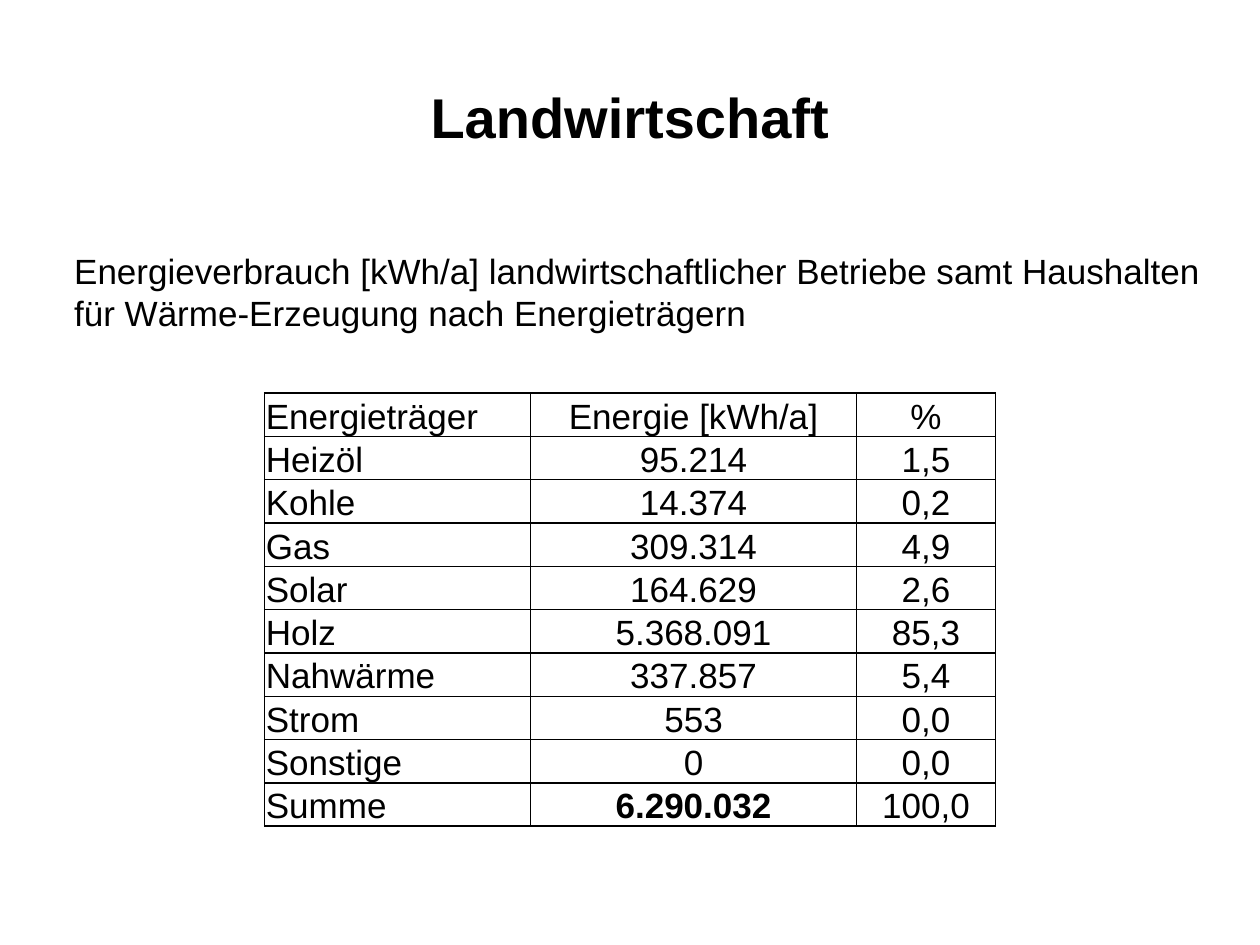
from dataclasses import dataclass
from typing import Any, NamedTuple

from lxml import etree
from pptx import Presentation
from pptx import util as u
from pptx.dml import color
from pptx.enum import text
from pptx.oxml import ns


@dataclass(frozen=True)
class Theme:
    font: str = "Arial"
    ink: str = "000000"
    paper: str = "FFFFFF"
    title: int = 32
    body: int = 20
    border: float = 1


class Box(NamedTuple):
    left: float
    top: float
    width: float
    height: float


class Row(NamedTuple):
    carrier: str
    energy: str
    percent: str


THEME = Theme()
WIDTH, HEIGHT = 10, 7.5
COLUMNS = (2.11, 2.59, 1.1)
ROW_HEIGHT = 0.32
TITLE_BOX = Box(0.5, 0.3, 9, 1.25)
INTRO_BOX = Box(0.49, 1.93, 9.39, 1.08)
TABLE_TOP = 3.12
ROWS = (
    Row("Energieträger", "Energie [kWh/a]", "%"),
    Row("Heizöl", "95.214", "1,5"),
    Row("Kohle", "14.374", "0,2"),
    Row("Gas", "309.314", "4,9"),
    Row("Solar", "164.629", "2,6"),
    Row("Holz", "5.368.091", "85,3"),
    Row("Nahwärme", "337.857", "5,4"),
    Row("Strom", "553", "0,0"),
    Row("Sonstige", "0", "0,0"),
    Row("Summe", "6.290.032", "100,0"),
)
TOTAL = ROWS[-1].energy


def write(tf: Any, content: str, *, size: int = THEME.body, bold: bool = False,
          centered: bool = False) -> None:
    p = tf.paragraphs[0]
    p.alignment = text.PP_ALIGN.CENTER if centered else text.PP_ALIGN.LEFT
    r = p.add_run()
    r.text = content
    r.font.name = THEME.font
    r.font.size = u.Pt(size)
    r.font.bold = bold
    r.font.color.rgb = color.RGBColor.from_string(THEME.ink)


def add_text(s: Any, box: Box, content: str, *, anchor: Any = text.MSO_ANCHOR.TOP,
             **style: Any) -> None:
    tf = s.shapes.add_textbox(*map(u.Inches, box)).text_frame
    tf.word_wrap = True
    tf.vertical_anchor = anchor
    write(tf, content, **style)


def set_borders(cell: Any) -> None:
    props = cell._tc.get_or_add_tcPr()
    for i, side in enumerate("LRTB"):
        line = etree.Element(ns.qn(f"a:ln{side}"), w=str(u.Pt(THEME.border)))
        fill = etree.SubElement(line, ns.qn("a:solidFill"))
        etree.SubElement(fill, ns.qn("a:srgbClr"), val=THEME.ink)
        props.insert(i, line)


def add_table(s: Any, rows: tuple[Row, ...]) -> None:
    width = sum(COLUMNS)
    box = Box((WIDTH - width) / 2, TABLE_TOP, width, ROW_HEIGHT * len(rows))
    table = s.shapes.add_table(len(rows), len(COLUMNS), *map(u.Inches, box)).table
    table.first_row = table.horz_banding = False
    for column, share in zip(table.columns, COLUMNS):
        column.width = u.Inches(share)
    for i, row in enumerate(rows):
        table.rows[i].height = u.Inches(ROW_HEIGHT)
        for j, content in enumerate(row):
            cell = table.cell(i, j)
            cell.margin_left = cell.margin_right = cell.margin_top = u.Inches(0.01)
            cell.margin_bottom = 0
            cell.vertical_anchor = text.MSO_ANCHOR.BOTTOM
            cell.fill.background()
            set_borders(cell)
            write(cell.text_frame, content, bold=content == TOTAL, centered=j > 0)


def main() -> None:
    prs = Presentation()
    prs.slide_width, prs.slide_height = u.Inches(WIDTH), u.Inches(HEIGHT)
    s = prs.slides.add_slide(prs.slide_layouts[6])
    s.background.fill.solid()
    s.background.fill.fore_color.rgb = color.RGBColor.from_string(THEME.paper)
    add_text(s, TITLE_BOX, "Landwirtschaft", anchor=text.MSO_ANCHOR.MIDDLE,
             size=THEME.title, bold=True, centered=True)
    add_table(s, ROWS)
    add_text(s, INTRO_BOX, "Energieverbrauch [kWh/a] landwirtschaftlicher Betriebe samt "
             "Haushalten für Wärme-Erzeugung nach Energieträgern")
    prs.save("out.pptx")


if __name__ == "__main__":
    main()
